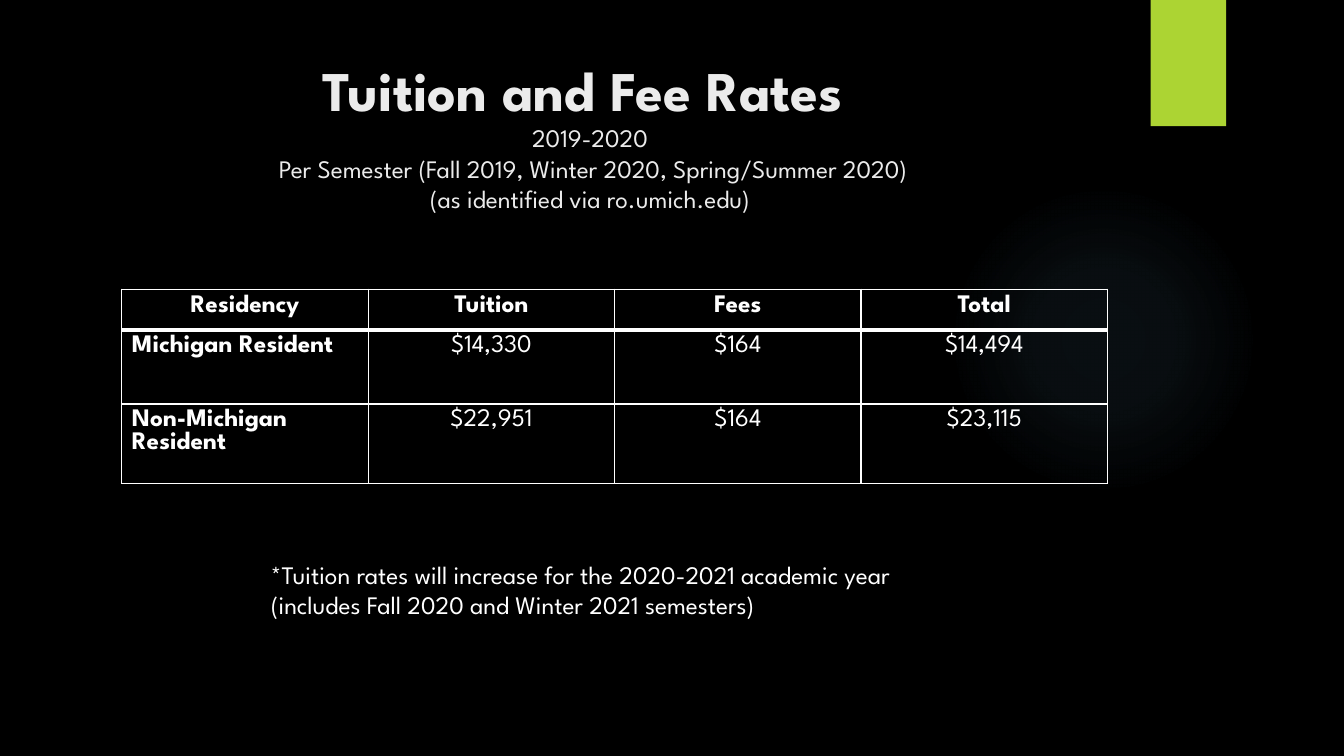
"""Build the tuition and fee rates slide."""
from lxml.etree import SubElement
from pptx import Presentation
from pptx.dml.color import RGBColor
from pptx.enum.shapes import MSO_SHAPE as Shape
from pptx.enum.text import MSO_ANCHOR as Anchor, PP_ALIGN as Align
from pptx.oxml import parse_xml
from pptx.oxml.ns import nsdecls, qn
from pptx.util import Cm, Pt

FONT = "League Spartan"
WHITE = "FFFFFF"


def color(code):
    """Turn a hex string into a colour."""
    return RGBColor.from_string(code)


def write(para, text, size=18, bold=False, shade=WHITE):
    """Add one styled run."""
    run = para.add_run()
    run.text = text
    run.font.name = FONT
    run.font.size = Pt(size)
    run.font.bold = bold
    run.font.color.rgb = color(shade)


prs = Presentation()
prs.slide_width, prs.slide_height = Cm(33.87), Cm(19.05)
slide = prs.slides.add_slide(prs.slide_layouts[5])
slide.background.fill.solid()
slide.background.fill.fore_color.rgb = color("000000")
shapes = slide.shapes

glow = shapes.add_shape(Shape.OVAL, Cm(23.9), Cm(4.65), Cm(7.82), Cm(7.82))
glow.shadow.inherit = False
glow.line.fill.background()
stops = "".join(
    f'<a:gs pos="{pos}000"><a:srgbClr val="7AC4F0"><a:alpha val="{alpha}000"/></a:srgbClr></a:gs>'
    for pos, alpha in [(0, 7), (36, 6), (69, 0), (100, 0)])
grad = parse_xml(
    f'<a:gradFill {nsdecls("a")} rotWithShape="1"><a:gsLst>{stops}</a:gsLst>'
    '<a:path path="circle"><a:fillToRect l="50000" t="50000" r="50000" b="50000"/></a:path></a:gradFill>')
glow._element.spPr.find(qn("a:prstGeom")).addnext(grad)

tab = shapes.add_shape(Shape.RECTANGLE, Cm(29), 0, Cm(1.9), Cm(3.18))
tab.shadow.inherit = False
tab.fill.solid()
tab.fill.fore_color.rgb = color("ACD433")
tab.line.fill.background()

title = shapes.title
title.left, title.top, title.width, title.height = Cm(1.8), Cm(1.27), Cm(26.14), Cm(3.89)
frame = title.text_frame
frame.word_wrap = True
frame.vertical_anchor = Anchor.TOP
para = frame.paragraphs[0]
para.alignment = Align.CENTER
para.line_spacing = 1.0
write(para, "Tuition and Fee Rates ", 40, True, "EBEBEB")
for line in ["2019-2020",
             " Per Semester (Fall 2019, Winter 2020, Spring/Summer 2020)",
             "(as identified via ro.umich.edu)"]:
    para.add_line_break()
    write(para, line, shade="EBEBEB")

rates = [["Residency", "Tuition", "Fees", "Total"],
         ["Michigan Resident", "$14,330", "$164", "$14,494"],
         ["Non-Michigan Resident", "$22,951", "$164", "$23,115"]]
table = shapes.add_table(3, 4, Cm(3.07), Cm(7.29), Cm(24.84), Cm(4.9)).table
table.first_row = table.horz_banding = False
for row, high in zip(table.rows, [1.02, 1.87, 2.01]):
    row.height = Cm(high)
for col in table.columns:
    col.width = Cm(6.21)
for r, row in enumerate(rates):
    for c, text in enumerate(row):
        cell = table.cell(r, c)
        para = cell.text_frame.paragraphs[0]
        para.alignment = Align.LEFT if r and not c else Align.CENTER
        write(para, text, bold=r == 0 or c == 0)
        props = cell._tc.get_or_add_tcPr()
        for side in "LRTB":
            thick = (r, side) in [(0, "B"), (1, "T")]
            edge = SubElement(props, qn(f"a:ln{side}"), w=str(Pt(3 if thick else 1)))
            fill = SubElement(edge, qn("a:solidFill"))
            SubElement(fill, qn("a:srgbClr"), val=WHITE)
        cell.fill.background()

note = shapes.add_textbox(Cm(6.58), Cm(13.97), Cm(17.25), Cm(1.8)).text_frame
note.word_wrap = True
write(note.paragraphs[0],
      "*Tuition rates will increase for the 2020-2021 academic year "
      "(includes Fall 2020 and Winter 2021 semesters)")

prs.save("out.pptx")
